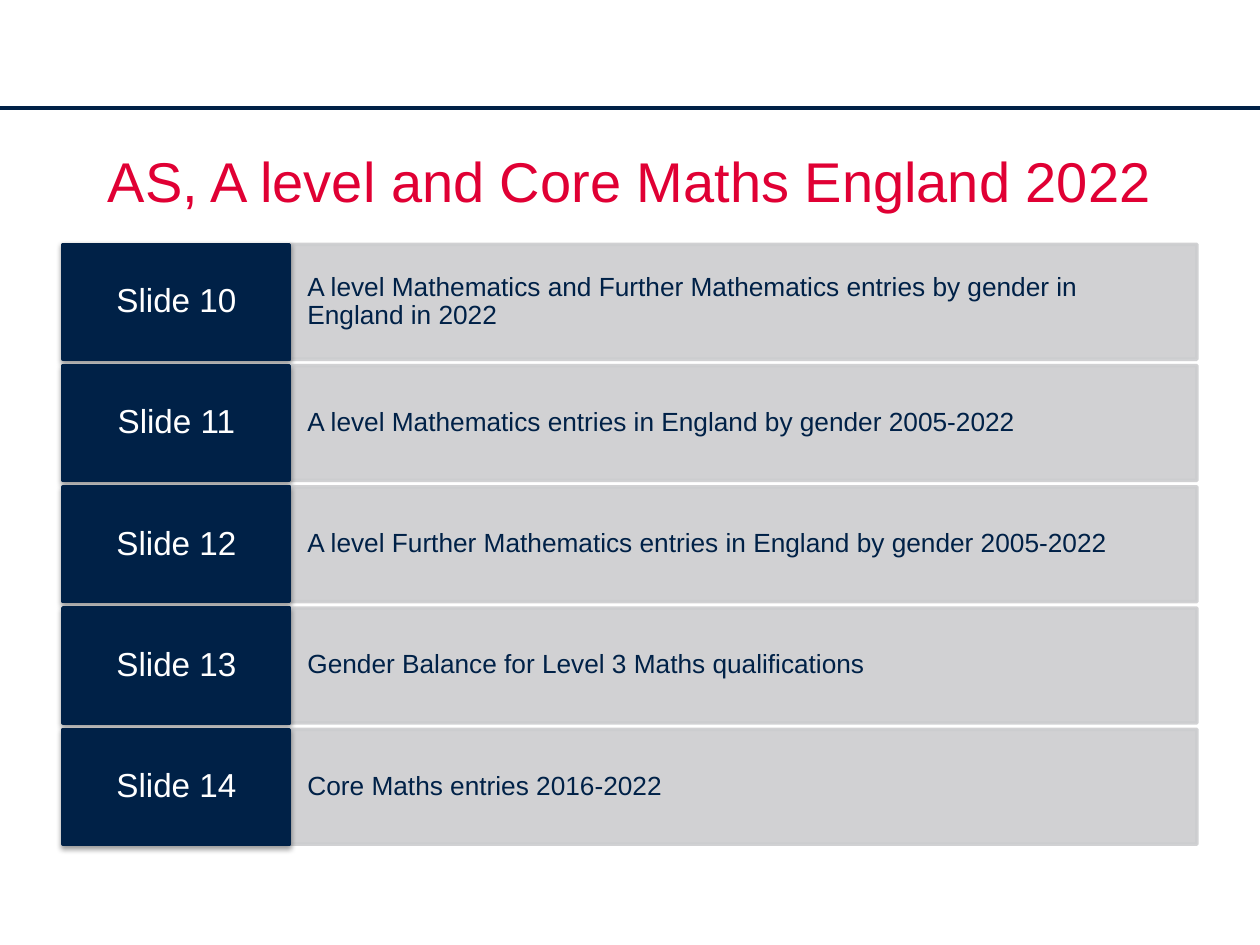
from lxml import etree
from pptx import Presentation
from pptx.dml.color import RGBColor
from pptx.enum import shapes, text
from pptx.oxml import parse_xml
from pptx.oxml.ns import nsdecls, qn
from pptx.util import Inches, Pt

NAVY = RGBColor(0x00, 0x21, 0x47)
RED = RGBColor(0xE0, 0x00, 0x34)
GREY = RGBColor(0xCC, 0xCD, 0xCF)
WHITE = RGBColor(0xFF, 0xFF, 0xFF)

ROWS = [
    ("Slide 10", "A level Mathematics and Further Mathematics entries by gender in England in 2022"),
    ("Slide 11", "A level Mathematics entries in England by gender 2005-2022"),
    ("Slide 12", "A level Further Mathematics entries in England by gender 2005-2022"),
    ("Slide 13", "Gender Balance for Level 3 Maths qualifications"),
    ("Slide 14", "Core Maths entries 2016-2022"),
]


def write(sp, content, size, color, align, anchor, inset_x, inset_y):
    tf = sp.text_frame
    tf.word_wrap = True
    tf.vertical_anchor = anchor
    tf.margin_left = tf.margin_right = Inches(inset_x)
    tf.margin_top = tf.margin_bottom = Inches(inset_y)
    tf.text = content
    p = tf.paragraphs[0]
    p.alignment = align
    font = p.runs[0].font
    font.name, font.size, font.color.rgb = "Arial", Pt(size), color
    return p


def add_block(s, x, y, w, h, color):
    sp = s.shapes.add_shape(shapes.MSO_SHAPE.RECTANGLE,
                            Inches(x), Inches(y), Inches(w), Inches(h))
    sp.shadow.inherit = False
    sp.fill.solid()
    sp.fill.fore_color.rgb = color
    sp.line.color.rgb = color
    sp.line.width = Pt(2)
    return sp


def set_opacity(sp, percent):
    for clr in sp._element.spPr.iter(qn("a:srgbClr")):
        etree.SubElement(clr, qn("a:alpha")).set("val", str(percent * 1000))


def add_drop_shadow(sp):
    effects = sp._element.spPr.find(qn("a:effectLst"))
    effects.append(parse_xml(
        f'<a:outerShdw {nsdecls("a")} blurRad="{Pt(3.1)}" dist="{Pt(1.6)}" dir="5400000" '
        'rotWithShape="0"><a:srgbClr val="000000"><a:alpha val="38000"/></a:srgbClr>'
        '</a:outerShdw>'))


def add_header(s, x, y, w):
    # Rule across the slide
    rule = s.shapes.add_connector(shapes.MSO_CONNECTOR.STRAIGHT,
                                  Inches(x), Inches(y), Inches(x + w), Inches(y))
    rule.line.color.rgb = NAVY
    rule.line.width = Pt(2.25)
    etree.SubElement(rule._element.spPr, qn("a:effectLst"))
    # Title
    title = s.shapes.add_textbox(Inches(x + 0.5), Inches(y + 0.21), Inches(w - 1), Inches(0.84))
    write(title, "AS, A level and Core Maths England 2022", 32, RED,
          text.PP_ALIGN.CENTER, text.MSO_ANCHOR.TOP, 0.1, 0.09)


def add_contents(s, x, y, w, h, gap=0.05):
    label_w = w * 0.2
    row_h = (h - gap * (len(ROWS) - 1)) / len(ROWS)
    for i, (label, topic) in enumerate(ROWS):
        top = y + i * (row_h + gap)
        # Topic bar
        bar = add_block(s, x + label_w, top, w - label_w, row_h, GREY)
        set_opacity(bar, 90)
        p = write(bar, topic, 15, NAVY, text.PP_ALIGN.LEFT, text.MSO_ANCHOR.MIDDLE, 0.14, 0.23)
        p.line_spacing = 0.9
        # Slide number label
        tag = add_block(s, x, top, label_w, row_h, NAVY)
        add_drop_shadow(tag)
        p = write(tag, label, 19, WHITE, text.PP_ALIGN.CENTER, text.MSO_ANCHOR.MIDDLE, 0.1, 0.09)
        p.line_spacing = 0.9


def main():
    prs = Presentation()
    prs.slide_width, prs.slide_height = Inches(10), Inches(7.5)
    s = prs.slides.add_slide(prs.slide_layouts[6])
    add_header(s, 0, 0.86, 10)
    add_contents(s, 0.5, 1.94, 9, 4.76)
    prs.save("out.pptx")


if __name__ == "__main__":
    main()
